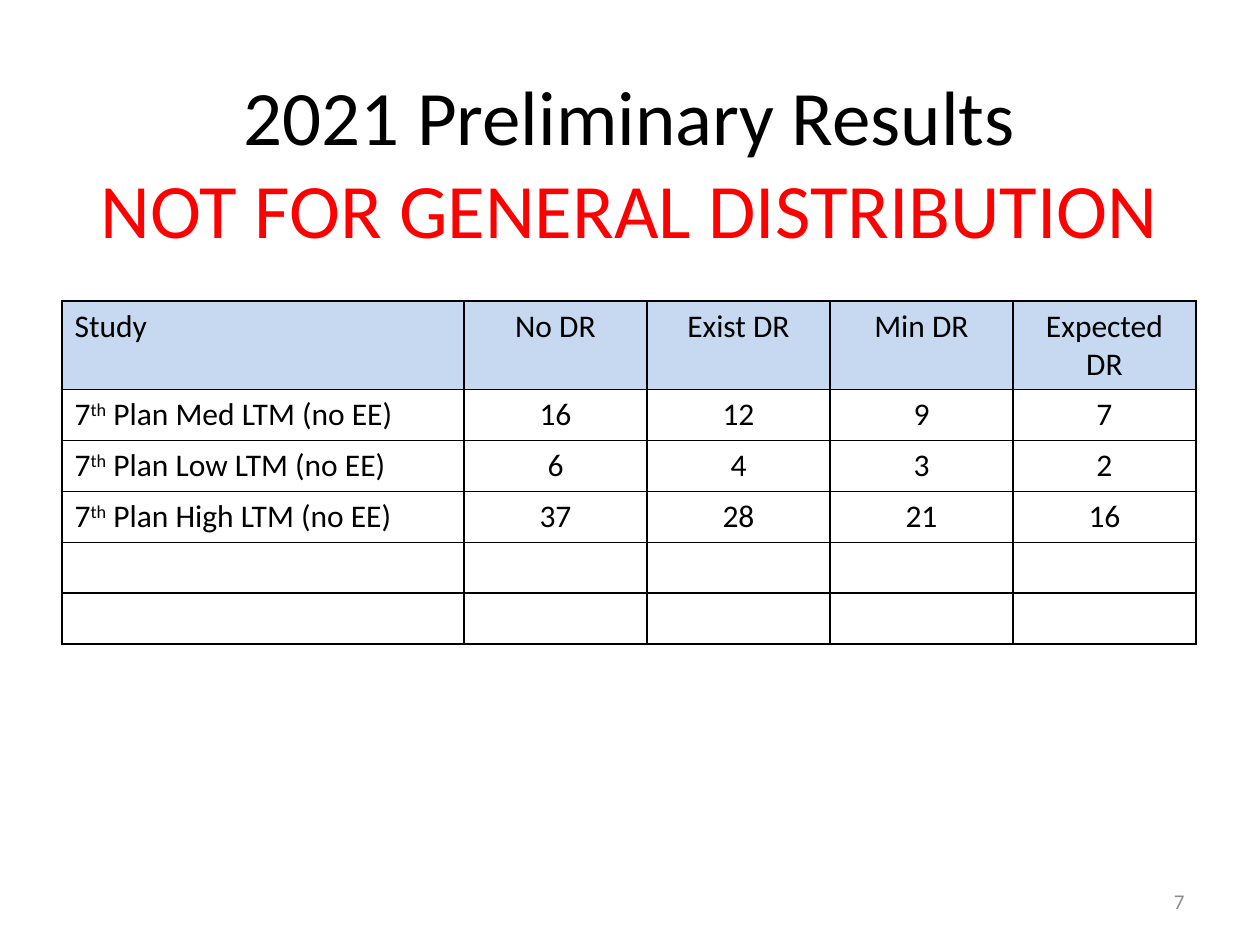
from pptx import Presentation
from pptx.dml.color import RGBColor
from pptx.enum.text import MSO_ANCHOR, PP_ALIGN
from pptx.oxml.ns import qn
from pptx.util import Pt
from lxml.etree import SubElement

SCALE = 914400 / 126  # EMU in one px
FONT = "Calibri"
HUES = {"ink": "000000", "alert": "FF0000", "head": "C6D9F1",
        "body": "FFFFFF", "page": "8C8C8C"}
HEADS = ["Study", "No DR", "Exist DR", "Min DR", "Expected DR"]
PLANS = [("Med", 16, 12, 9, 7), ("Low", 6, 4, 3, 2), ("High", 37, 28, 21, 16)]
SPARE = 2  # empty rows at the foot of the table


def px(n):
    return round(n * SCALE)


def rgb(name):
    return RGBColor.from_string(HUES[name])


def write(frame, *parts, size=18, hue="ink", align=PP_ALIGN.LEFT, raised=None):
    """Write the parts as runs of one paragraph, the raised one as superscript."""
    para = frame.paragraphs[0]
    para.alignment = align
    for part in parts:
        run = para.add_run()
        run.text = part
        run.font.name = FONT
        run.font.size = Pt(size)
        run.font.color.rgb = rgb(hue)
        if part == raised:
            run.font._element.set("baseline", "30000")
    return para


def add_box(slide, x, y, w, h):
    frame = slide.shapes.add_textbox(px(x), px(y), px(w), px(h)).text_frame
    frame.word_wrap = True
    frame.vertical_anchor = MSO_ANCHOR.MIDDLE
    return frame


def style_cell(cell, fill):
    props = cell._tc.get_or_add_tcPr()
    for side in ("lnL", "lnR", "lnT", "lnB"):
        line = SubElement(props, qn(f"a:{side}"), w=str(Pt(1)))
        solid = SubElement(line, qn("a:solidFill"))
        SubElement(solid, qn("a:srgbClr"), val=HUES["ink"])
    cell.fill.solid()
    cell.fill.fore_color.rgb = rgb(fill)


def add_grid(slide, x, y, widths, high):
    rows = [[(head,) for head in HEADS]]
    for plan, *counts in PLANS:
        label = ("7", "th", f" Plan {plan} LTM (no EE)")
        rows.append([label] + [(str(count),) for count in counts])
    rows += [[()] * len(HEADS)] * SPARE

    table = slide.shapes.add_table(
        len(rows), len(widths), px(x), px(y),
        px(sum(widths)), px(high * len(rows))).table
    for col, width in zip(table.columns, widths):
        col.width = px(width)
    for r, row in enumerate(rows):
        table.rows[r].height = px(high)
        for c, parts in enumerate(row):
            cell = table.cell(r, c)
            style_cell(cell, "body" if r else "head")
            write(cell.text_frame, *parts, raised="th",
                  align=PP_ALIGN.CENTER if c else PP_ALIGN.LEFT)


def main():
    deck = Presentation()
    deck.slide_width, deck.slide_height = px(1260), px(945)
    slide = deck.slides.add_slide(deck.slide_layouts[6])

    # Title in two lines
    title = add_box(slide, 63, 38, 1134, 246)
    look = {"size": 44, "align": PP_ALIGN.CENTER}
    write(title, "2021 Preliminary Results", **look).add_line_break()
    write(title, "NOT FOR GENERAL DISTRIBUTION", hue="alert", **look)

    # Results table
    add_grid(slide, 62, 301, [402] + [183] * 4, 51)

    # Page number
    write(add_box(slide, 903, 876, 294, 50), "7",
          size=12, hue="page", align=PP_ALIGN.RIGHT)

    deck.save("out.pptx")


if __name__ == "__main__":
    main()
